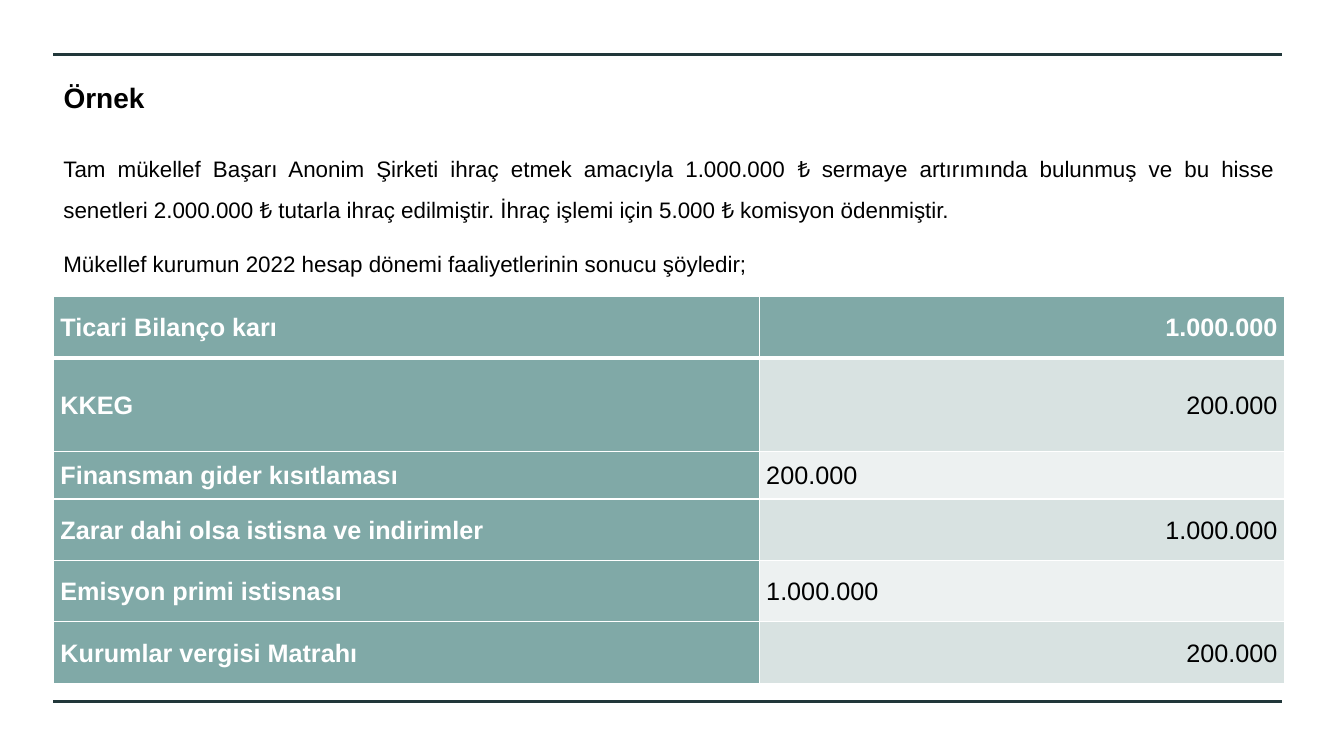
from pptx import Presentation
from pptx.dml.color import RGBColor
from pptx.enum.shapes import MSO_CONNECTOR
from pptx.enum.text import MSO_ANCHOR, PP_ALIGN
from pptx.oxml.ns import qn
from pptx.util import Emu, Pt
from lxml import etree

LEFT, RIGHT, JUST = PP_ALIGN.LEFT, PP_ALIGN.RIGHT, PP_ALIGN.JUSTIFY
TOP, MIDDLE = MSO_ANCHOR.TOP, MSO_ANCHOR.MIDDLE
LINE = MSO_CONNECTOR.STRAIGHT

SCALE = 9144  # EMU in one px, 100 px to the inch
FONT = "Arial"
HUES = {
    "rule": "21373A",
    "head": "80A9A7",
    "dark": "D8E2E1",
    "pale": "EDF1F1",
    "white": "FFFFFF",
    "black": "000000",
}
EDGE, WIDE = 53, 1221

TITLE = "Örnek"
BODY = [
    "Tam mükellef Başarı Anonim Şirketi ihraç etmek amacıyla 1.000.000 ₺ "
    "sermaye artırımında bulunmuş ve bu hisse senetleri 2.000.000 ₺ tutarla "
    "ihraç edilmiştir. İhraç işlemi için 5.000 ₺ komisyon ödenmiştir.",
    "Mükellef kurumun 2022 hesap dönemi faaliyetlerinin sonucu şöyledir;",
]
COLS = [700, 521]
# label, value, value alignment, row height
ROWS = [
    ("Ticari Bilanço karı", "1.000.000", RIGHT, 61),
    ("KKEG", "200.000", RIGHT, 93),
    ("Finansman gider kısıtlaması", "200.000", LEFT, 47),
    ("Zarar dahi olsa istisna ve indirimler", "1.000.000", RIGHT, 61),
    ("Emisyon primi istisnası", "1.000.000", LEFT, 61),
    ("Kurumlar vergisi Matrahı", "200.000", RIGHT, 61),
]


def px(num):
    return Emu(num * SCALE)


def hue(name):
    return RGBColor.from_string(HUES[name])


def style(para, size, color, bold=False, align=LEFT):
    para.alignment = align
    font = para.font
    font.name, font.size, font.bold = FONT, Pt(size), bold
    font.color.rgb = hue(color)


def add_rule(slide, y):
    rule = slide.shapes.add_connector(
        LINE, px(EDGE), px(y), px(EDGE + 1219), px(y))
    rule.line.color.rgb = hue("rule")
    rule.line.width = Pt(2.25)
    etree.SubElement(rule._element.spPr, qn("a:effectLst"))


def set_title(slide):
    title = slide.shapes.title
    title.left, title.top = px(EDGE), px(75)
    title.width, title.height = px(WIDE), px(45)
    frame = title.text_frame
    frame.text = TITLE
    frame.vertical_anchor = TOP
    style(frame.paragraphs[0], 20, "black", True)


def add_body(slide):
    box = slide.shapes.add_textbox(px(EDGE), px(136), px(WIDE), px(140))
    frame = box.text_frame
    frame.word_wrap = True
    frame.text = "\n".join(BODY)
    for para in frame.paragraphs:
        style(para, 16, "black", align=JUST)
        para.line_spacing = 1.5
        para.space_before = Pt(10)


def add_edge(cell, side, width):
    edge = etree.SubElement(
        cell._tc.get_or_add_tcPr(), qn("a:" + side), w=str(Pt(width)))
    fill = etree.SubElement(edge, qn("a:solidFill"))
    etree.SubElement(fill, qn("a:srgbClr"), val=HUES["white"])


def fill_cell(cell, text, row, head, align):
    # Borders come before the fill in the cell's XML
    for side in ("lnL", "lnR", "lnT", "lnB"):
        thick = (side, row) in (("lnB", 0), ("lnT", 1))
        add_edge(cell, side, 3 if thick else 1)
    cell.fill.solid()
    band = "dark" if row % 2 else "pale"
    cell.fill.fore_color.rgb = hue("head" if head else band)
    cell.margin_left = cell.margin_right = px(7)
    cell.margin_top = cell.margin_bottom = 0
    cell.vertical_anchor = MIDDLE
    cell.text = text
    para = cell.text_frame.paragraphs[0]
    style(para, 18, "white" if head else "black", head, align)
    para.line_spacing = 1.07


def add_grid(slide):
    high = sum(row[-1] for row in ROWS)
    grid = slide.shapes.add_table(
        len(ROWS), len(COLS), px(EDGE), px(294), px(WIDE), px(high)).table
    grid.first_col = True
    for col, width in zip(grid.columns, COLS):
        col.width = px(width)
    for i, (label, value, align, height) in enumerate(ROWS):
        grid.rows[i].height = px(height)
        fill_cell(grid.cell(i, 0), label, i, True, LEFT)
        fill_cell(grid.cell(i, 1), value, i, i == 0, align)


def main():
    deck = Presentation()
    deck.slide_width, deck.slide_height = px(1333), px(750)
    slide = deck.slides.add_slide(deck.slide_layouts[5])
    # Frame rules
    for y in (54, 696):
        add_rule(slide, y)
    # Text and table
    set_title(slide)
    add_body(slide)
    add_grid(slide)
    deck.save("out.pptx")


if __name__ == "__main__":
    main()
